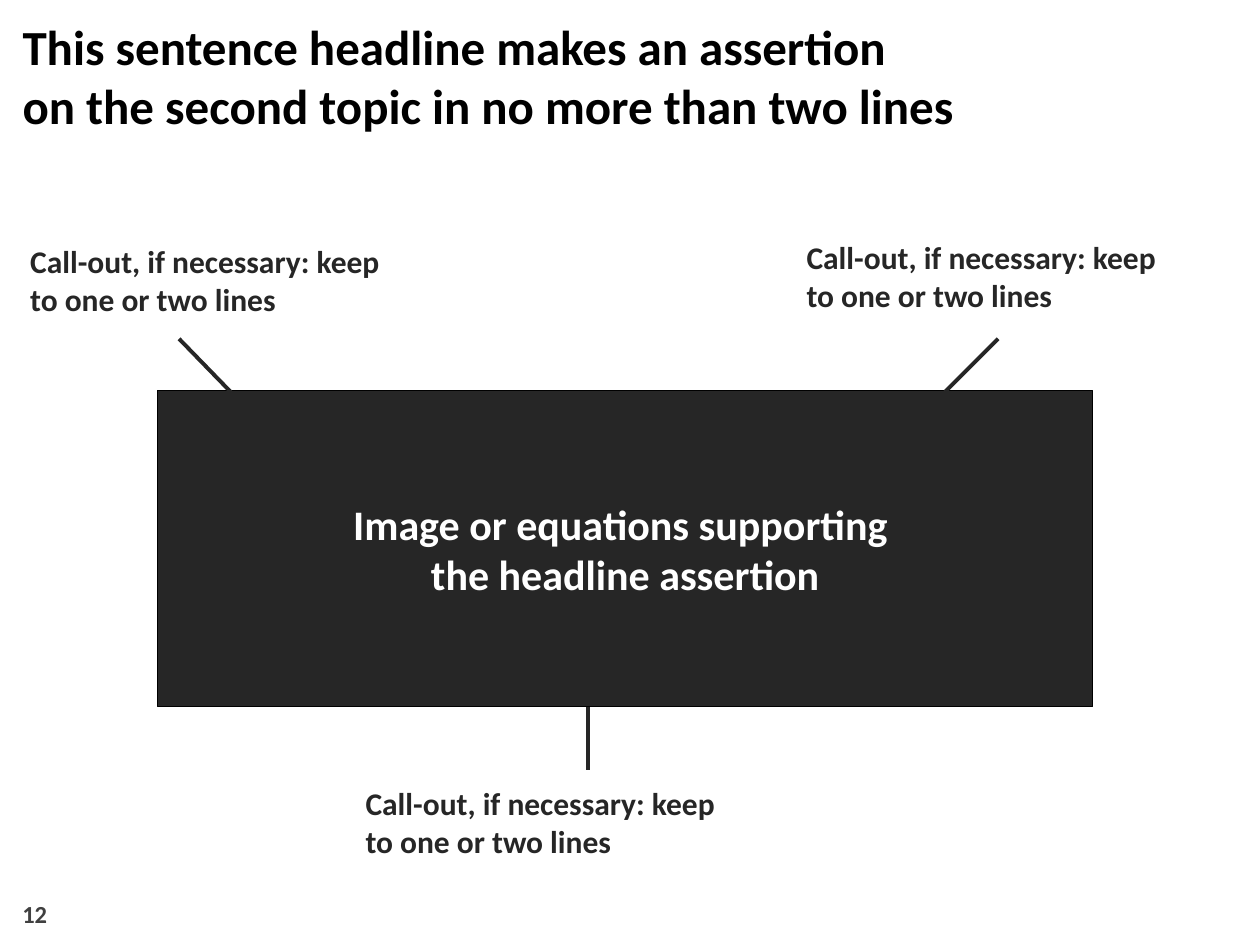
"""Build an assertion-evidence slide: headline, central panel and three call-outs."""
from dataclasses import dataclass

from lxml.etree import SubElement
from pptx import Presentation
from pptx.dml.color import RGBColor
from pptx.enum.shapes import MSO_CONNECTOR, MSO_SHAPE
from pptx.enum.text import MSO_ANCHOR, MSO_AUTO_SIZE, PP_ALIGN
from pptx.oxml.ns import qn
from pptx.util import Cm, Pt


@dataclass(frozen=True)
class Theme:
    font: str = "Calibri"
    black: str = "000000"
    dark: str = "262626"
    grey: str = "404040"
    white: str = "FFFFFF"
    headline_size: int = 28
    panel_size: int = 24
    callout_size: int = 18
    number_size: int = 14
    border_width: float = 0.75
    leader_width: float = 2.25


THEME = Theme()

HEADLINE = "This sentence headline makes an assertion \von the second topic in no more than two lines"
PANEL_TEXT = "Image or equations supporting \vthe headline assertion"
CALLOUT_TEXT = "Call-out, if necessary: keep \vto one or two lines"
PAGE_NUMBER = "12"

HEADLINE_BOX = (0.2, 0.2, 24.77, 2.62)
PANEL_BOX = (3.18, 7.87, 18.85, 6.38)
NUMBER_BOX = (0.2, 17.83, 5.92, 1.02)
CALLOUT_SIZE = (9.09, 1.68)
CALLOUT_CORNERS = [(0.43, 4.8), (16.08, 4.72), (7.19, 15.72)]
BOTTOM_LEADER = (11.86, 13.82, 11.86, 15.52)
TOP_LEADERS = [(3.61, 6.83, 4.65, 7.9), (20.12, 6.83, 19.05, 7.9)]

CALLOUT_FRAME = {
    "margin_left": Cm(0.18),
    "margin_right": Cm(0.18),
    "margin_top": Cm(0.08),
    "margin_bottom": Cm(0.08),
}


def set_attributes(target, values):
    for name, value in values.items():
        setattr(target, name, value)


def write_text(shape, text, size, color, align=PP_ALIGN.LEFT, **frame_format):
    text_frame = shape.text_frame
    frame_values = {
        "word_wrap": True,
        "auto_size": MSO_AUTO_SIZE.NONE,
        "vertical_anchor": MSO_ANCHOR.TOP,
    }
    set_attributes(text_frame, frame_values | frame_format)
    paragraph = text_frame.paragraphs[0]
    paragraph.text = text
    paragraph.alignment = align
    for run in paragraph.runs:
        set_attributes(run.font, {"name": THEME.font, "size": Pt(size), "bold": True})
        run.font.color.rgb = RGBColor.from_string(color)


def add_text(slide, box, text, size, color, **frame_format):
    shape = slide.shapes.add_textbox(*map(Cm, box))
    write_text(shape, text, size, color, **frame_format)


def add_leader(slide, ends):
    connector = slide.shapes.add_connector(MSO_CONNECTOR.STRAIGHT, *map(Cm, ends))
    connector.line.color.rgb = RGBColor.from_string(THEME.dark)
    connector.line.width = Pt(THEME.leader_width)
    SubElement(connector._element.spPr, qn("a:effectLst"))


def add_panel(slide):
    panel = slide.shapes.add_shape(MSO_SHAPE.RECTANGLE, *map(Cm, PANEL_BOX))
    panel.shadow.inherit = False
    panel.fill.solid()
    panel.fill.fore_color.rgb = RGBColor.from_string(THEME.dark)
    panel.line.color.rgb = RGBColor.from_string(THEME.black)
    panel.line.width = Pt(THEME.border_width)
    write_text(panel, PANEL_TEXT, THEME.panel_size, THEME.white,
               align=PP_ALIGN.CENTER, vertical_anchor=MSO_ANCHOR.MIDDLE)


def main():
    presentation = Presentation()
    set_attributes(presentation, {"slide_width": Cm(25.4), "slide_height": Cm(19.05)})
    slide = presentation.slides.add_slide(presentation.slide_layouts[5])

    title = slide.shapes.title
    set_attributes(title, dict(zip(("left", "top", "width", "height"), map(Cm, HEADLINE_BOX))))
    write_text(title, HEADLINE, THEME.headline_size, THEME.black)

    add_text(slide, NUMBER_BOX, PAGE_NUMBER, THEME.number_size, THEME.grey,
             vertical_anchor=MSO_ANCHOR.BOTTOM)
    add_leader(slide, BOTTOM_LEADER)
    add_panel(slide)
    for ends in TOP_LEADERS:
        add_leader(slide, ends)
    for corner in CALLOUT_CORNERS:
        add_text(slide, corner + CALLOUT_SIZE, CALLOUT_TEXT, THEME.callout_size,
                 THEME.dark, **CALLOUT_FRAME)

    presentation.save("out.pptx")


if __name__ == "__main__":
    main()
